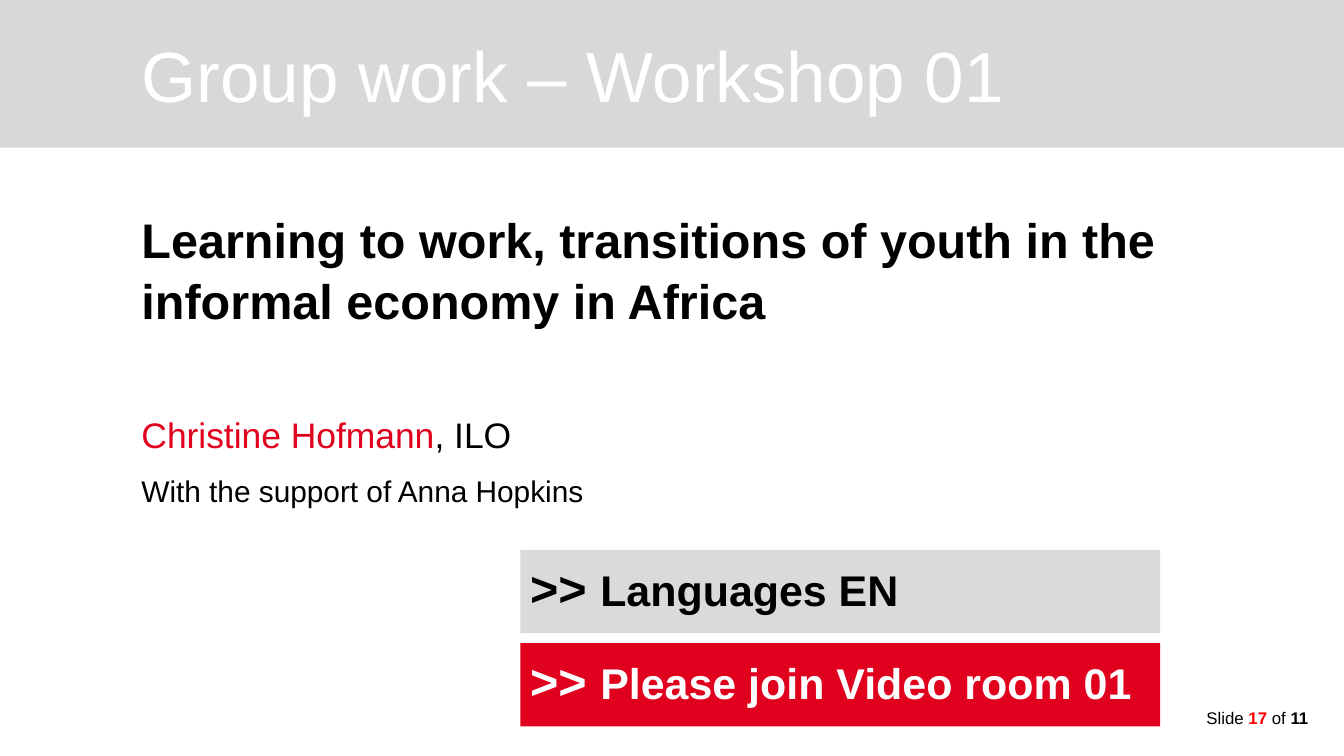
from pptx import Presentation
from pptx.dml.color import RGBColor
from pptx.enum import shapes, text
from pptx.util import Pt

WHITE = RGBColor(0xFF, 0xFF, 0xFF)
BLACK = RGBColor(0, 0, 0)
RED = RGBColor(0xE0, 0x01, 0x1E)
NUMBER_RED = RGBColor(0xFF, 0, 0)
BAND_GREY = RGBColor(0xD8, 0xD8, 0xD8)
BAR_GREY = RGBColor(0xD9, 0xDA, 0xD9)
FONT = "Arial"

# Content: each run is (text, size, colour, bold)
TITLE = [("Group work – Workshop 01", 38, WHITE, False)]
# Each paragraph is (space before, runs)
BODY = [
    (0, [("Learning to work, transitions of youth in the informal economy in Africa",
          26, BLACK, True)]),
    (44, [("Christine Hofmann", 19, RED, False), (", ILO", 19, BLACK, False)]),
    (8, [("With the support of Anna Hopkins", 16, BLACK, False)]),
]
# Each bar is (text, fill, text colour)
BARS = [
    ("Languages EN", BAR_GREY, BLACK),
    ("Please join Video room 01", RED, WHITE),
]
SLIDE_NUMBER = [
    ("Slide ", 9, BLACK, False), ("17", 9, NUMBER_RED, True),
    (" of ", 9, BLACK, False), ("11 ", 9, BLACK, True),
]

# Layout
SLIDE_W, SLIDE_H = 720, 405
BAND_H = 79.2
TEXT_LEFT = 70.6
BAR_LEFT, BAR_TOP, BAR_W, BAR_H, BAR_STEP = 278.8, 294.6, 342.7, 44.6, 50

prs = Presentation()
prs.slide_width, prs.slide_height = Pt(SLIDE_W), Pt(SLIDE_H)
slide = prs.slides.add_slide(prs.slide_layouts[6])


def add_bar(left, top, width, height, fill):
    bar = slide.shapes.add_shape(shapes.MSO_SHAPE.RECTANGLE,
                                 Pt(left), Pt(top), Pt(width), Pt(height))
    bar.shadow.inherit = False
    bar.fill.solid()
    bar.fill.fore_color.rgb = fill
    bar.line.fill.background()
    return bar


def add_text_box(left, top, width, height):
    return slide.shapes.add_textbox(Pt(left), Pt(top), Pt(width), Pt(height))


def write(box, paragraphs, anchor=text.MSO_ANCHOR.TOP,
          align=text.PP_ALIGN.LEFT, spacing=1.0):
    frame = box.text_frame
    frame.word_wrap = True
    frame.vertical_anchor = anchor
    frame.margin_left = frame.margin_right = Pt(5.2)
    frame.margin_top = frame.margin_bottom = Pt(2.8)
    for i, (before, runs) in enumerate(paragraphs):
        paragraph = frame.add_paragraph() if i else frame.paragraphs[0]
        paragraph.alignment = align
        paragraph.line_spacing = spacing
        if before:
            paragraph.space_before = Pt(before)
        for words, size, colour, bold in runs:
            run = paragraph.add_run()
            run.text = words
            run.font.name = FONT
            run.font.size = Pt(size)
            run.font.color.rgb = colour
            run.font.bold = bold


# Title band and slide number
add_bar(0, 0, SLIDE_W, BAND_H, BAND_GREY)
write(add_text_box(623.5, 376.6, 85, 16.6), [(0, SLIDE_NUMBER)],
      align=text.PP_ALIGN.RIGHT)

# Title and body
write(add_text_box(TEXT_LEFT, 0, 572.4, BAND_H), [(0, TITLE)],
      anchor=text.MSO_ANCHOR.MIDDLE)
write(add_text_box(TEXT_LEFT, 108, 644.4, 174), BODY, spacing=1.05)

# Call-to-action bars
for row, (label, fill, colour) in enumerate(BARS):
    bar = add_bar(BAR_LEFT, BAR_TOP + row * BAR_STEP, BAR_W, BAR_H, fill)
    write(bar, [(0, [(">> ", 26, colour, True), (label, 23, colour, True)])],
          spacing=1.05)

prs.save("out.pptx")
